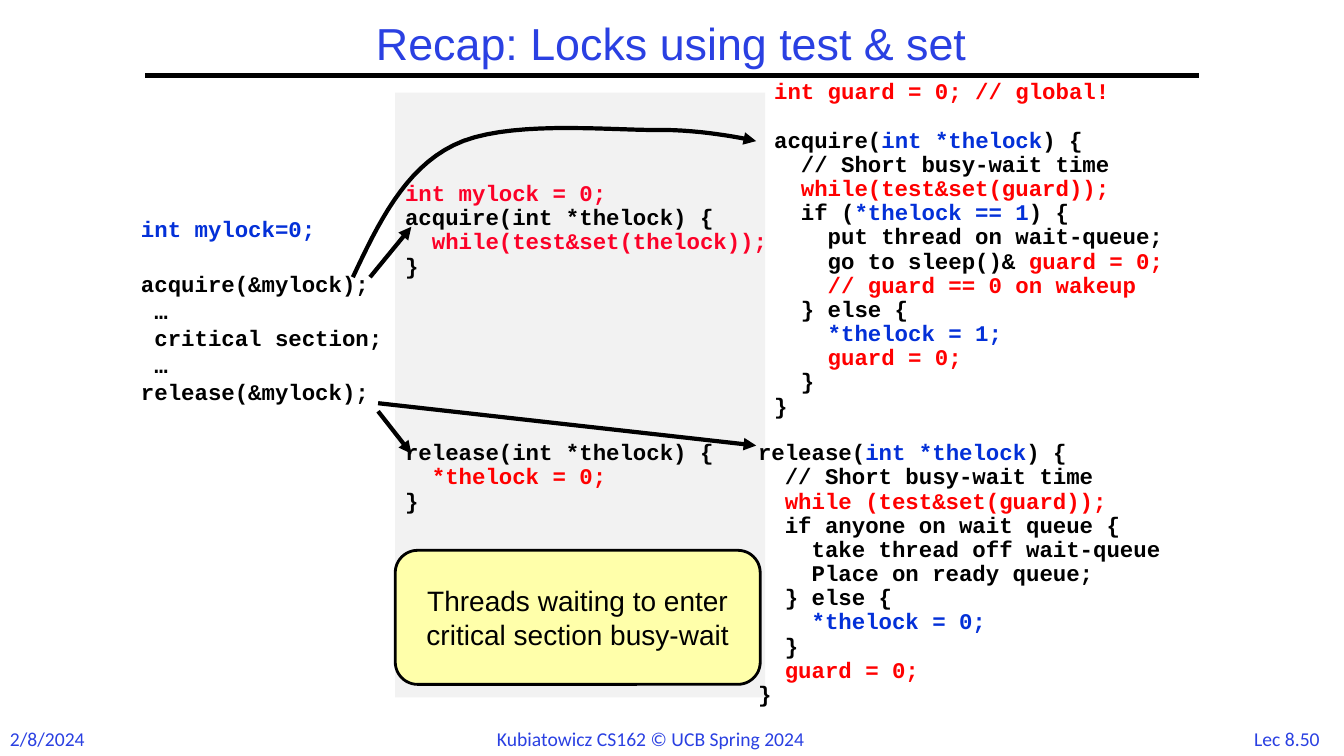
"""Build the slide that recaps locks using test & set."""
from lxml import etree
from pptx import Presentation
from pptx import util as u
from pptx.dml.color import RGBColor
from pptx.enum import shapes, text
from pptx.oxml.ns import qn

BLACK, BLUE, RED, CRIMSON, TITLE = "000000", "0330D8", "FF0000", "FC0128", "2A40E2"


def rgb(value):
    return RGBColor.from_string(value)


def write(sp, lines, font="Courier New", size=16, color=BLACK, bold=True, align="LEFT",
          anchor="TOP", wrap=True, spacing=0.9, before=0, gaps={}):
    tf = sp.text_frame
    tf.word_wrap = wrap
    tf.vertical_anchor = text.MSO_ANCHOR[anchor]
    for i, line in enumerate(lines):
        p = tf.add_paragraph() if i else tf.paragraphs[0]
        p.alignment = text.PP_ALIGN[align]
        p.line_spacing = spacing
        p.space_before = u.Pt(gaps.get(i, before))
        for part in [(line, color)] if isinstance(line, str) else line:
            r = p.add_run()
            r.text = part[0]
            r.font.name, r.font.size, r.font.bold = font, u.Pt(size), bold
            r.font.color.rgb = rgb(part[1])


prs = Presentation()
prs.slide_width, prs.slide_height = u.Inches(13.33), u.Inches(7.5)
s = prs.slides.add_slide(prs.slide_layouts[6])

footers = [
    (12.28, 0.97, "Lec 8.50", "CENTER"),
    (0, 0.96, "2/8/2024", "LEFT"),
    (4.83, 3.68, "Kubiatowicz CS162 © UCB Spring 2024", "LEFT"),
]
for x, w, words, align in footers:
    sp = s.shapes.add_textbox(u.Inches(x), u.Inches(7.16), u.Inches(w), u.Inches(0.34))
    write(sp, [words], font="Calibri", size=14, color=TITLE, bold=False, align=align,
          wrap=False, spacing=1.0)

rule = s.shapes.add_connector(shapes.MSO_CONNECTOR.STRAIGHT, u.Inches(1.44), u.Inches(0.75),
                              u.Inches(11.89), u.Inches(0.75))
rule.line.color.rgb, rule.line.width = rgb(BLACK), u.Pt(3)
etree.SubElement(rule._element.spPr, qn("a:effectLst"))

panel = s.shapes.add_shape(shapes.MSO_SHAPE.RECTANGLE, u.Inches(3.92), u.Inches(0.92),
                           u.Inches(3.67), u.Inches(6))
panel.shadow.inherit = False
panel.fill.solid()
panel.fill.fore_color.rgb = rgb("F2F2F2")
panel.line.fill.background()

title = s.shapes.add_textbox(u.Inches(1.44), u.Inches(0.17), u.Inches(10.44), u.Inches(0.58))
write(title, ["Recap: Locks using test & set"], font="Arial", size=32, color=TITLE, bold=False,
      align="CENTER", anchor="MIDDLE")

guarded_acquire = [
    [("int guard = 0; // global!", RED)],
    [("acquire(", BLACK), ("int *thelock", BLUE), (") {", BLACK)],
    "  // Short busy-wait time",
    [("  while(test&set(guard));", RED)],
    [("  if (", BLACK), ("*thelock == 1", BLUE), (") {", BLACK)],
    "    put thread on wait-queue;",
    [("    go to sleep()& ", BLACK), ("guard = 0;", RED)],
    [("    // guard == 0 on wakeup", RED)],
    "  } else {",
    [("    *thelock = 1;", BLUE)],
    [("    guard = 0;", RED)],
    "  }",
    "}",
]
guarded_release = [
    [("release(", BLACK), ("int *thelock", BLUE), (") {", BLACK)],
    "  // Short busy-wait time",
    [("  while (test&set(guard));", RED)],
    "  if anyone on wait queue {",
    "    take thread off wait-queue",
    "    Place on ready queue;",
    "  } else {",
    [("    *thelock = 0;", BLUE)],
    "  }",
    [("  guard = 0;", RED)],
    "}",
]
caller = [
    [("int mylock=0;", BLUE)],
    "acquire(&mylock);",
    " …",
    " critical section;",
    " …",
    "release(&mylock);",
]
spin_acquire = [
    [("int mylock = 0;", CRIMSON)],
    "acquire(int *thelock) {",
    [("  while(test&set(thelock));", CRIMSON)],
    "}",
]
spin_release = ["release(int *thelock) {", [("  *thelock = 0;", RED)], "}"]
listings = [
    ((7.58, 0.75, 4.17, 3.49), guarded_acquire, {"gaps": {1: 17.3}}),
    ((7.42, 4.33, 4.35, 2.77), guarded_release, {"gaps": {0: 1.6}}),
    ((1.3, 2.14, 2.69, 1.78), caller, {"spacing": 0.8, "before": 4, "gaps": {1: 23.4}}),
    ((3.92, 1.76, 3.83, 1.07), spin_acquire, {}),
    ((3.92, 4.33, 3.33, 0.83), spin_release, {"gaps": {0: 1.6}}),
]
for at, lines, fmt in listings:
    write(s.shapes.add_textbox(*[u.Inches(v) for v in at]), lines, **fmt)

callout = s.shapes.add_shape(shapes.MSO_SHAPE.ROUNDED_RECTANGLE, u.Inches(3.92), u.Inches(5.46),
                             u.Inches(3.62), u.Inches(1.33))
callout.shadow.inherit = False
callout.fill.solid()
callout.fill.fore_color.rgb = rgb("FFFFAA")
callout.line.color.rgb, callout.line.width = rgb(BLACK), u.Pt(2)
write(callout, ["Threads waiting to enter critical section busy-wait"], font="Arial", size=20,
      bold=False, align="CENTER", anchor="MIDDLE", spacing=1.0)

bends = [
    ((3.5, 2.75), (3.75, 2.22), (4.01, 1.68), (4.5, 1.44)),
    ((4.5, 1.44), (5, 1.19), (6, 1.29), (6.5, 1.29)),
    ((6.5, 1.29), (6.99, 1.28), (7.5, 1.4), (7.5, 1.4)),
]
STEPS = 16
curve = [bends[0][0]]
for a, b, c, d in bends:
    for i in range(1, STEPS + 1):
        t = i / STEPS
        weights = ((1 - t) ** 3, 3 * t * (1 - t) ** 2, 3 * t ** 2 * (1 - t), t ** 3)
        curve.append([sum(k * v for k, v in zip(weights, axis)) for axis in zip(a, b, c, d)])

arrows = [
    [(3.75, 4), (7.5, 4.42)],
    [(3.75, 4.08), (4.08, 4.5)],
    [(3.67, 2.75), (4.08, 2.25)],
    curve,
]
for points in arrows:
    start, *rest = [(u.Inches(x), u.Inches(y)) for x, y in points]
    builder = s.shapes.build_freeform(*start)
    builder.add_line_segments(rest, close=False)
    arrow = builder.convert_to_shape()
    arrow.shadow.inherit = False
    arrow.fill.background()
    arrow.line.color.rgb, arrow.line.width = rgb(BLACK), u.Pt(3)
    etree.SubElement(arrow.line._get_or_add_ln(), qn("a:tailEnd"), type="triangle")

prs.save("out.pptx")
